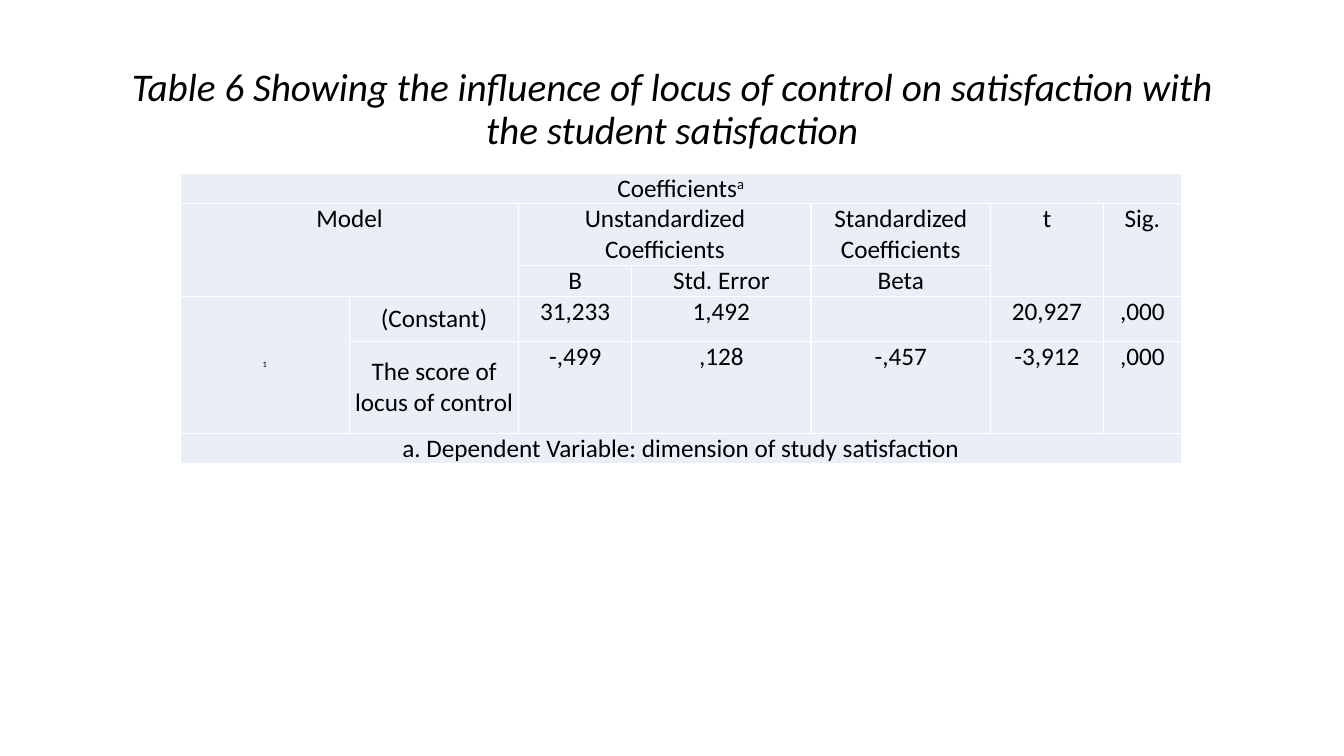
from lxml.etree import SubElement
from pptx import Presentation
from pptx.dml.color import RGBColor
from pptx.enum.text import MSO_ANCHOR as Anchor, MSO_AUTO_SIZE as AutoSize, PP_ALIGN as Align
from pptx.oxml.ns import qn
from pptx.util import Inches, Pt

COLORS = {"text": "000000", "cell": "EAEFF7", "border": "FFFFFF"}
NO_MARGINS = dict.fromkeys(("margin_left", "margin_right", "margin_top", "margin_bottom"), 0)

COLUMN_SHARES = [12.6, 12.6, 8.4, 13.35, 13.35, 8.4, 5.8]
ROW_SHARES = [4, 8.13, 4, 6, 12.13, 4]

# (row, column): text
COEFFICIENTS = {
    (0, 0): "Coefficients",
    (1, 0): "Model",
    (1, 2): "Unstandardized Coefficients",
    (1, 4): "Standardized Coefficients",
    (1, 5): "t",
    (1, 6): "Sig.",
    (2, 2): "B",
    (2, 3): "Std. Error",
    (2, 4): "Beta",
    (3, 0): "1",
    (3, 1): "(Constant)",
    (3, 2): "31,233",
    (3, 3): "1,492",
    (3, 5): "20,927",
    (3, 6): ",000",
    (4, 1): "The score of locus of control",
    (4, 2): "-,499",
    (4, 3): ",128",
    (4, 4): "-,457",
    (4, 5): "-3,912",
    (4, 6): ",000",
    (5, 0): "a. Dependent Variable: dimension of study satisfaction",
}
# first cell: last cell
SPANS = {
    (0, 0): (0, 6),
    (1, 0): (2, 1),
    (1, 2): (1, 3),
    (1, 5): (2, 5),
    (1, 6): (2, 6),
    (3, 0): (4, 0),
    (5, 0): (5, 6),
}
MIDDLE_CELLS = {(3, 0), (3, 1), (4, 1)}
MODEL_NUMBER = (3, 0)


def apply(target, values):
    for name, value in values.items():
        setattr(target, name, value)


class SlideBuilder:
    """Holds the style and the slide; lengths are percentages of the slide's size."""

    def __init__(self, deck):
        self.deck = deck
        self.slide = deck.slides.add_slide(deck.slide_layouts[5])
        self.font = {"name": "Calibri", "size": Pt(18), "bold": False, "italic": False}

    def across(self, share):
        return round(self.deck.slide_width * share / 100)

    def down(self, share):
        return round(self.deck.slide_height * share / 100)

    def add_text(self, paragraph, text, **changes):
        run = paragraph.add_run()
        run.text = text
        apply(run.font, self.font | changes)
        run.font.color.rgb = RGBColor.from_string(COLORS["text"])
        return run

    def title(self, text, left, top, width, height):
        heading = self.slide.shapes.title
        apply(heading, {"left": self.across(left), "top": self.down(top),
                        "width": self.across(width), "height": self.down(height)})
        apply(heading.text_frame, {"word_wrap": True, "auto_size": AutoSize.NONE,
                                   "vertical_anchor": Anchor.TOP})
        paragraph = heading.text_frame.paragraphs[0]
        apply(paragraph, {"alignment": Align.CENTER, "line_spacing": 0.9, "space_before": Pt(10)})
        self.add_text(paragraph, text, size=Pt(28), italic=True)

    def table(self, left, top, column_shares, row_shares):
        table = self.slide.shapes.add_table(
            len(row_shares), len(column_shares), self.across(left), self.down(top),
            self.across(sum(column_shares)), self.down(sum(row_shares))).table
        apply(table, {"first_row": False, "horz_banding": False})
        for column, share in zip(table.columns, column_shares):
            column.width = self.across(share)
        for row, share in zip(table.rows, row_shares):
            row.height = self.down(share)
        for cell in table.iter_cells():
            self.style_cell(cell)
        return table

    def style_cell(self, cell):
        apply(cell, NO_MARGINS)
        properties = cell._tc.get_or_add_tcPr()
        for side in ("lnL", "lnR", "lnT", "lnB"):
            line = SubElement(properties, qn(f"a:{side}"), w=str(Pt(1)))
            SubElement(SubElement(line, qn("a:solidFill")), qn("a:srgbClr"), val=COLORS["border"])
        cell.fill.solid()
        cell.fill.fore_color.rgb = RGBColor.from_string(COLORS["cell"])

    def fill_cell(self, cell, text, anchor, **changes):
        cell.vertical_anchor = anchor
        paragraph = cell.text_frame.paragraphs[0]
        paragraph.alignment = Align.CENTER
        indent = str(Inches(0.04))
        for name, value in {"marL": indent, "marR": indent, "indent": "0"}.items():
            paragraph._p.get_or_add_pPr().set(name, value)
        self.add_text(paragraph, text, **changes)
        return paragraph


def main():
    deck = Presentation()
    apply(deck, {"slide_width": Inches(13.33), "slide_height": Inches(7.5)})
    builder = SlideBuilder(deck)
    builder.title("Table 6 Showing the influence of locus of control on satisfaction with "
                  "the student satisfaction", 6.9, 8.3, 86.2, 81.9)

    table = builder.table(13.4, 22.9, COLUMN_SHARES, ROW_SHARES)
    for first, last in SPANS.items():
        table.cell(*first).merge(table.cell(*last))
    for place, text in COEFFICIENTS.items():
        anchor = Anchor.MIDDLE if place in MIDDLE_CELLS else Anchor.TOP
        size = Pt(6 if place == MODEL_NUMBER else 18)
        paragraph = builder.fill_cell(table.cell(*place), text, anchor, size=size)
        if place == (0, 0):
            footnote_mark = builder.add_text(paragraph, "a")
            footnote_mark._r.get_or_add_rPr().set("baseline", "30000")

    deck.save("out.pptx")


if __name__ == "__main__":
    main()
